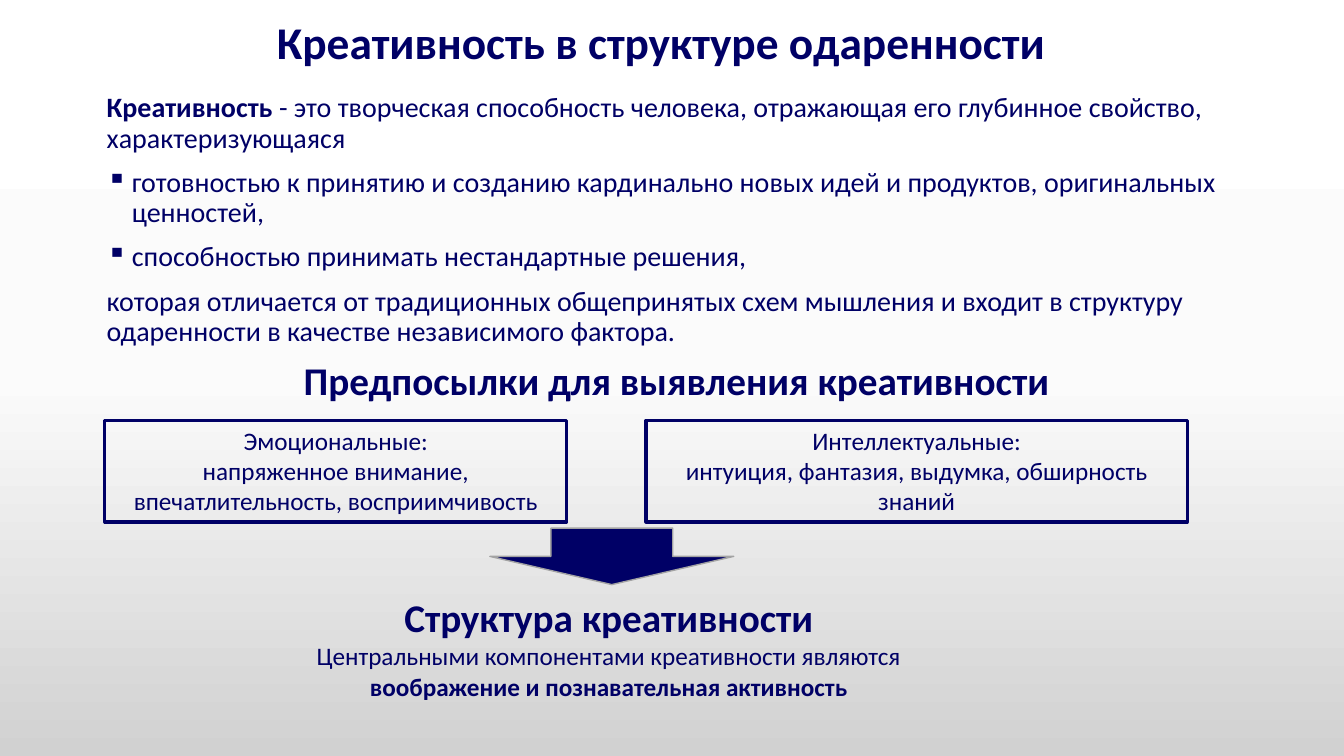
import copy
from dataclasses import dataclass

import lxml.etree
import pptx
import pptx.dml.color
import pptx.enum.shapes
import pptx.enum.text
import pptx.oxml.ns
import pptx.shapes.autoshape
import pptx.slide
import pptx.text.text
import pptx.util

Pt = pptx.util.Pt
Align = pptx.enum.text.PP_ALIGN
Kind = pptx.enum.shapes.MSO_SHAPE


@dataclass(frozen=True)
class Theme:
    font: str = "Calibri"
    navy: str = "000066"
    edge: str = "A3A3A3"
    title: float = 32.4
    head: float = 28
    body: float = 20
    small: float = 18
    fade: tuple = ((0, "FFFFFF"), (0.5, "FBFBFB"), (1, "D1D1D1"))


@dataclass(frozen=True)
class Rect:
    left: float
    top: float
    width: float
    height: float

    def place(self) -> tuple:
        return Pt(self.left), Pt(self.top), Pt(self.width), Pt(self.height)


@dataclass(frozen=True)
class Para:
    """Runs alternate between plain and bold, starting as `bold` says."""
    runs: tuple
    size: float
    bold: bool = False
    align: Align = Align.CENTER
    bullet: bool = False


@dataclass(frozen=True)
class Box:
    rect: Rect
    paras: tuple


THEME = Theme()


def color(code: str) -> pptx.dml.color.RGBColor:
    return pptx.dml.color.RGBColor.from_string(code)


def mark(para: pptx.text.text._Paragraph) -> None:
    props = para._p.get_or_add_pPr()
    props.set("marL", str(Pt(18)))
    props.set("indent", str(-Pt(18)))
    sign = lxml.etree.SubElement(props, pptx.oxml.ns.qn("a:buChar"))
    sign.set("char", "▪")


def write(frame: pptx.text.text.TextFrame, paras: tuple, tight: bool = False) -> None:
    frame.word_wrap = True
    for i, item in enumerate(paras):
        para = frame.paragraphs[0] if i == 0 else frame.add_paragraph()
        para.alignment = item.align
        if tight:
            para.line_spacing = 0.9
            para.space_before = Pt(10)
        if item.bullet:
            mark(para)
        font = para.font
        font.name, font.size = THEME.font, Pt(item.size)
        font.color.rgb = color(THEME.navy)
        if len(item.runs) == 1:
            font.bold = item.bold
        for j, text in enumerate(item.runs):
            run = para.add_run()
            run.text = text
            if len(item.runs) > 1:
                run.font.bold = item.bold ^ (j % 2 == 1)


def shape(slide: pptx.slide.Slide, kind: Kind, rect: Rect, line: str,
          width: float) -> pptx.shapes.autoshape.Shape:
    item = slide.shapes.add_shape(kind, *rect.place())
    item.shadow.inherit = False
    item.line.color.rgb = color(line)
    item.line.width = Pt(width)
    return item


def shade(slide: pptx.slide.Slide) -> None:
    fill = slide.background.fill
    fill.gradient()
    fill.gradient_angle = 270
    stops = slide.element.xpath(".//a:gsLst")[0]
    stops.append(copy.deepcopy(stops[-1]))
    for stop, (place, code) in zip(fill.gradient_stops, THEME.fade):
        stop.position = place
        stop.color.rgb = color(code)


TITLE = Rect(58.3, 10.1, 828, 43.2)
BODY = Box(Rect(69.1, 63.4, 828, 231.8), (
    Para(("Креативность ", "- это творческая способность человека, отражающая "
          "его глубинное свойство, характеризующаяся"),
         THEME.body, True, Align.LEFT),
    Para(("готовностью к принятию и созданию кардинально новых идей и "
          "продуктов, оригинальных ценностей,",),
         THEME.body, align=Align.LEFT, bullet=True),
    Para(("способностью принимать нестандартные решения,",),
         THEME.body, align=Align.LEFT, bullet=True),
    Para(("которая отличается от традиционных общепринятых схем мышления и "
          "входит в структуру одаренности в качестве независимого фактора.",),
         THEME.body, align=Align.LEFT),
    Para(("Предпосылки для выявления креативности",), THEME.head, True),
))
CAUSES = (
    Box(Rect(74.9, 300.2, 329.8, 72.7), (
        Para(("Эмоциональные:",), THEME.small),
        Para(("напряженное внимание, впечатлительность, восприимчивость",),
             THEME.small),
    )),
    Box(Rect(461.5, 300.2, 386.6, 72.7), (
        Para(("Интеллектуальные:",), THEME.small),
        Para(("интуиция, фантазия, выдумка, обширность знаний",),
             THEME.small),
    )),
)
ARROW = Rect(349.9, 377.3, 174.2, 40.3)
RESULT = Box(Rect(166.3, 420.5, 537.1, 106.6), (
    Para(("Структура креативности",), THEME.head, True),
    Para(("Центральными компонентами креативности являются ",
          "воображение и познавательная активность"), THEME.small),
))


def main() -> None:
    deck = pptx.Presentation()
    deck.slide_width, deck.slide_height = Pt(960), Pt(540)
    slide = deck.slides.add_slide(deck.slide_layouts.get_by_name("Title Only"))
    shade(slide)

    # Title
    title = slide.shapes.title
    title.left, title.top, title.width, title.height = TITLE.place()
    frame = title.text_frame
    frame.auto_size = pptx.enum.text.MSO_AUTO_SIZE.NONE
    frame.vertical_anchor = pptx.enum.text.MSO_ANCHOR.MIDDLE
    write(frame, (Para(("Креативность в структуре одаренности",),
                       THEME.title, True),))
    frame.paragraphs[0].line_spacing = 0.9

    # Definition
    body = slide.shapes.add_textbox(*BODY.rect.place())
    write(body.text_frame, BODY.paras, tight=True)

    # Framed causes
    for cause in CAUSES:
        item = shape(slide, Kind.RECTANGLE, cause.rect, THEME.navy, 2.25)
        item.fill.background()
        item.text_frame.vertical_anchor = pptx.enum.text.MSO_ANCHOR.TOP
        write(item.text_frame, cause.paras)

    # Arrow to the result
    arrow = shape(slide, Kind.DOWN_ARROW, ARROW, THEME.edge, 1)
    arrow.fill.solid()
    arrow.fill.fore_color.rgb = color(THEME.navy)

    # Result
    result = slide.shapes.add_textbox(*RESULT.rect.place())
    write(result.text_frame, RESULT.paras)

    deck.save("out.pptx")


if __name__ == "__main__":
    main()
